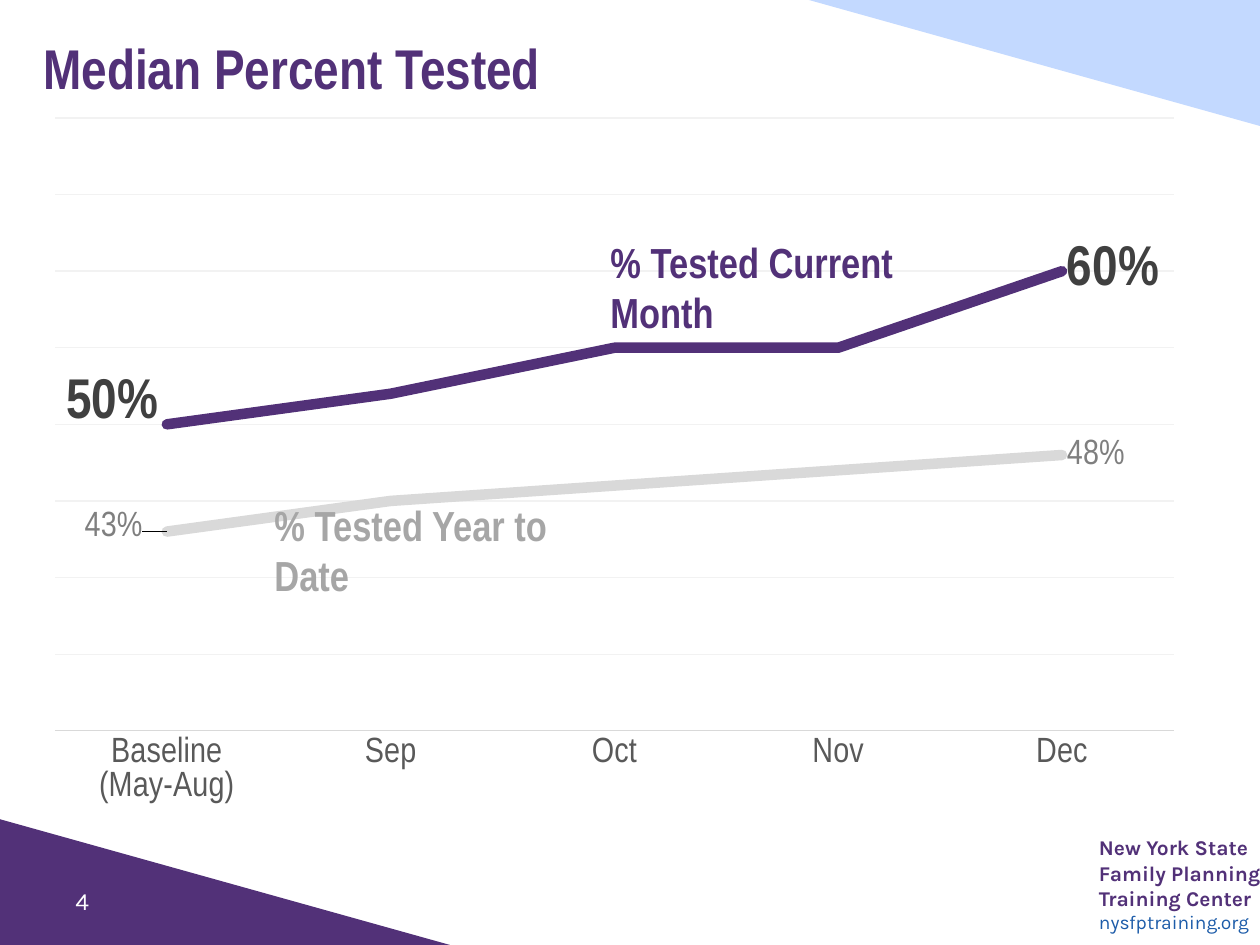
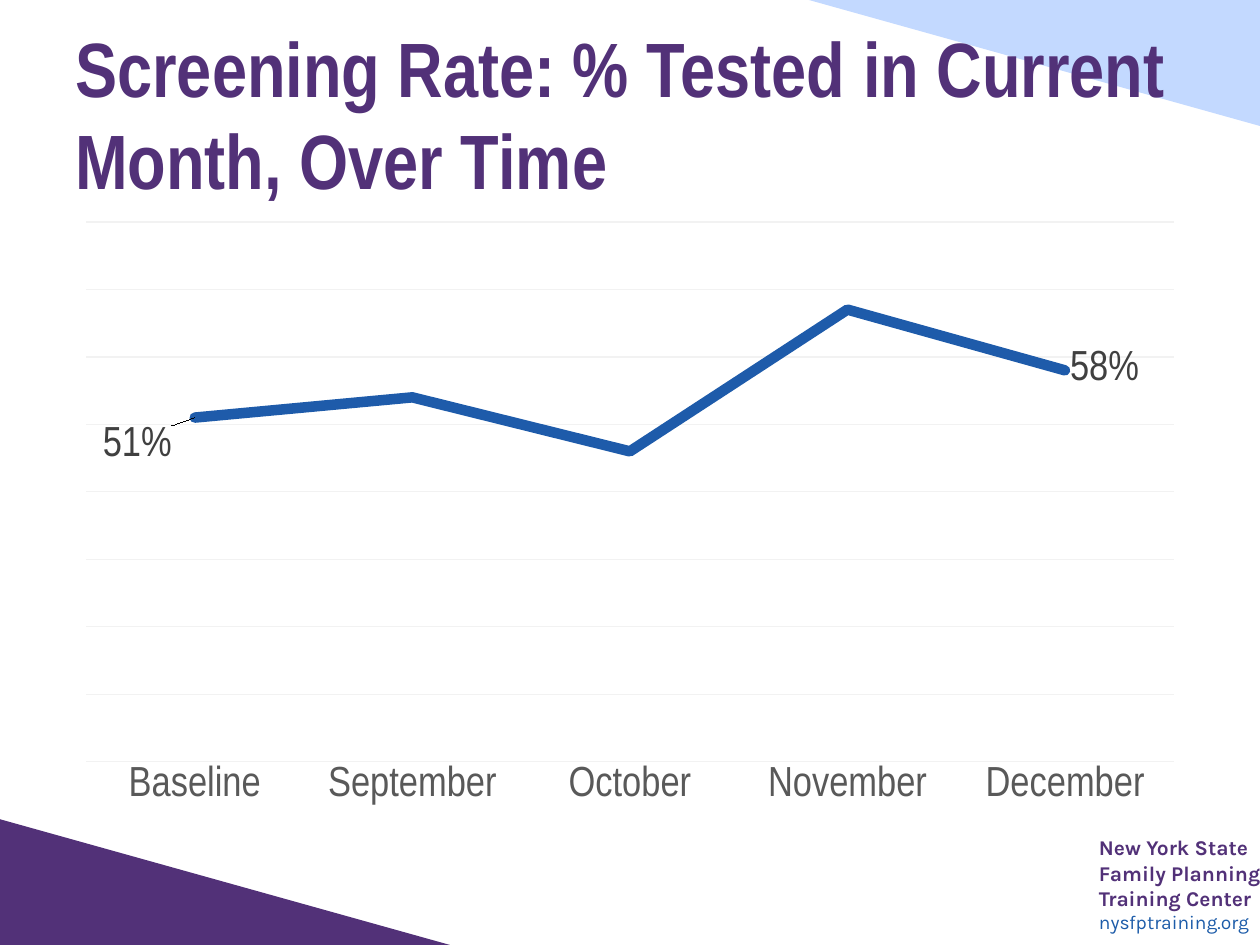
from lxml import etree
from pptx import Presentation
from pptx.chart.data import CategoryChartData
from pptx.dml.color import RGBColor
from pptx.enum.chart import XL_CHART_TYPE, XL_LABEL_POSITION, XL_MARKER_STYLE, XL_TICK_MARK
from pptx.enum.shapes import MSO_SHAPE
from pptx.enum.text import MSO_ANCHOR
from pptx.oxml import parse_xml
from pptx.util import Emu, Pt

LINE = XL_CHART_TYPE.LINE
LEFT, RIGHT = XL_LABEL_POSITION.LEFT, XL_LABEL_POSITION.RIGHT
BARE, NO_TICK = XL_MARKER_STYLE.NONE, XL_TICK_MARK.NONE
WEDGE = MSO_SHAPE.RIGHT_TRIANGLE
TOP, MIDDLE = MSO_ANCHOR.TOP, MSO_ANCHOR.MIDDLE

COLORS = {
    "purple": "523178", "sky": "C3D9FF", "link": "1D5CA9", "blue": "1E5BAA",
    "white": "FFFFFF", "black": "000000", "axis": "D9D9D9", "grid": "F2F2F2",
    "label": "595959", "dark": "404040", "mid": "7F7F7F", "gray": "A6A6A6",
}
HEAD, BODY = "Arial Narrow", "Karla"
C_NS = "http://schemas.openxmlformats.org/drawingml/2006/chart"
C15 = "http://schemas.microsoft.com/office/drawing/2012/chart"

WEDGES = [((-1, 819, 451, 126), 0, "purple"), ((809, 0, 451, 126), 180, "sky")]
FOOTER = [
    ("New York State", 12, BODY, "purple", True),
    ("Family Planning", 12, BODY, "purple", True),
    ("Training Center", 12, BODY, "purple", True),
    ("nysfptraining.org", 11, BODY, "link", False),
]
SLIDES = [
    {
        "title": ("Median Percent Tested", 32, (31, 31, 1166, 72)),
        "box": (31, 103, 1166, 716), "plot": (55, 118, 1119, 613),
        "cats": ["Baseline\n(May-Aug)", "Sep", "Oct", "Nov", "Dec"],
        "size": 20, "range": (0.3, 0.7, 0.05), "axis": "axis",
        "series": [
            {"name": "Series 1", "vals": [0.43, 0.45, 0.46, 0.47, 0.48],
             "color": "axis", "font": (20, "mid", False),
             "shift": (-19, -4), "leader": 1},
            {"name": "Series 2", "vals": [0.5, 0.52, 0.55, 0.55, 0.6],
             "color": "purple", "font": (32, "dark", True),
             "shift": (-3, -20), "leader": 0},
        ],
        "notes": [
            ((598, 230, 410, 63), MIDDLE and TOP, 
             ("% Tested Current Month", 24, HEAD, "purple", True)),
            ((262, 493, 374, 63), TOP,
             ("% Tested Year to Date", 24, HEAD, "gray", True)),
            ((63, 876, 176, 50), MIDDLE, ("4", 14, BODY, "white", False)),
        ],
    },
    {
        "title": ("Screening Rate: % Tested in Current Month, Over Time",
                  44, (63, 38, 1134, 150)),
        "box": (63, 210, 1134, 609), "plot": (86, 222, 1088, 540),
        "cats": ["Baseline", "September", "October", "November", "December"],
        "size": 24, "range": (0, 0.8, 0.1), "axis": None,
        "series": [
            {"name": "Series 1", "vals": [0.51, 0.54, 0.46, 0.67, 0.58],
             "color": "blue", "font": (24, "dark", False),
             "shift": (-18, 28), "leader": 0},
        ],
        "notes": [],
    },
]


def px(n):
    return Emu(round(n * 914400 / 126))


def place(box):
    return [px(n) for n in box]


def rgb(name):
    return RGBColor.from_string(COLORS[name])


def style(font, size, face, color, bold):
    font.size, font.name, font.bold = Pt(size), face, bold
    font.color.rgb = rgb(color)


def write(slide, box, rows, anchor=TOP, inset=None):
    frame = slide.shapes.add_textbox(*place(box)).text_frame
    frame.word_wrap = True
    frame.vertical_anchor = anchor
    if inset is not None:
        frame.margin_left = frame.margin_right = px(inset)
        frame.margin_top = frame.margin_bottom = px(inset)
    for i, (text, *look) in enumerate(rows):
        para = frame.add_paragraph() if i else frame.paragraphs[0]
        para.text = text
        style(para.font, *look)


def stroke(line, color, width):
    line.color.rgb = rgb(color)
    line.width = Pt(width)


def layout(x, y, w=None, h=None):
    root = etree.Element(f"{{{C_NS}}}layout", nsmap={"c": C_NS})
    inner = etree.SubElement(root, f"{{{C_NS}}}manualLayout")
    parts = [("x", x), ("y", y)]
    if w is not None:
        parts = [("layoutTarget", "inner"), ("xMode", "edge"),
                 ("yMode", "edge"), *parts, ("w", w), ("h", h)]
    for tag, val in parts:
        val = val if isinstance(val, str) else f"{val:.4f}"
        etree.SubElement(inner, f"{{{C_NS}}}{tag}", val=val)
    return parse_xml(etree.tostring(root))


def mark(line, item, box):
    size, color, bold = item["font"]
    tags = line.data_labels
    tags.show_value = False
    for i, side in ((0, LEFT), (len(item["vals"]) - 1, RIGHT)):
        tag = line.points[i].data_label
        style(tag.font, size, HEAD, color, bold)
        tag.position = side
    dx, dy = item["shift"]
    first = tags._element.xpath('c:dLbl/c:idx[@val="0"]')[0]
    first.addnext(layout(dx / box[2], dy / box[3]))
    tags._element.append(parse_xml(
        f'<c:extLst xmlns:c="{C_NS}" xmlns:c15="{C15}">'
        '<c:ext uri="{CE6537A1-D6FC-4f65-9D91-7224C49458BB}">'
        f'<c15:showLeaderLines val="{item["leader"]}"/></c:ext></c:extLst>'))


def draw(slide, data):
    box, plot = data["box"], data["plot"]
    table = CategoryChartData(number_format="0%")
    table.categories = data["cats"]
    for item in data["series"]:
        table.add_series(item["name"], item["vals"])
    chart = slide.shapes.add_chart(LINE, *place(box), table).chart
    chart.has_title = chart.has_legend = False
    style(chart.font, data["size"], HEAD, "black", False)

    cat, val = chart.category_axis, chart.value_axis
    cat.major_tick_mark = cat.minor_tick_mark = NO_TICK
    style(cat.tick_labels.font, data["size"], HEAD, "label", False)
    if data["axis"]:
        stroke(cat.format.line, data["axis"], 0.75)
    else:
        cat.format.line.fill.background()
    val.minimum_scale, val.maximum_scale, val.major_unit = data["range"]
    val.has_major_gridlines = True
    stroke(val.major_gridlines.format.line, "grid", 0.75)
    val.visible = False

    area = chart._chartSpace.chart.plotArea
    for old in area.xpath("c:layout"):
        area.remove(old)
    area.insert(0, layout((plot[0] - box[0]) / box[2], (plot[1] - box[1]) / box[3],
                          plot[2] / box[2], plot[3] / box[3]))
    chart.plots[0].vary_by_categories = False
    for line, item in zip(chart.plots[0].series, data["series"]):
        line.smooth = False
        line.marker.style = BARE
        stroke(line.format.line, item["color"], 6)
        line._element.xpath("c:spPr/a:ln")[0].set("cap", "rnd")
        mark(line, item, box)


def frame(slide):
    for box, turn, color in WEDGES:
        wedge = slide.shapes.add_shape(WEDGE, *place(box))
        wedge.rotation = turn
        wedge.shadow.inherit = False
        wedge.fill.solid()
        wedge.fill.fore_color.rgb = rgb(color)
        wedge.line.fill.background()
    write(slide, (1099, 835, 190, 102), FOOTER, inset=0)


def main():
    deck = Presentation()
    deck.slide_width, deck.slide_height = px(1260), px(945)
    for data in SLIDES:
        slide = deck.slides.add_slide(deck.slide_layouts[6])
        frame(slide)
        text, size, box = data["title"]
        write(slide, box, [(text, size, HEAD, "purple", True)], MIDDLE)
        draw(slide, data)
        for box, anchor, row in data["notes"]:
            write(slide, box, [row], anchor)
    deck.save("out.pptx")


if __name__ == "__main__":
    main()
